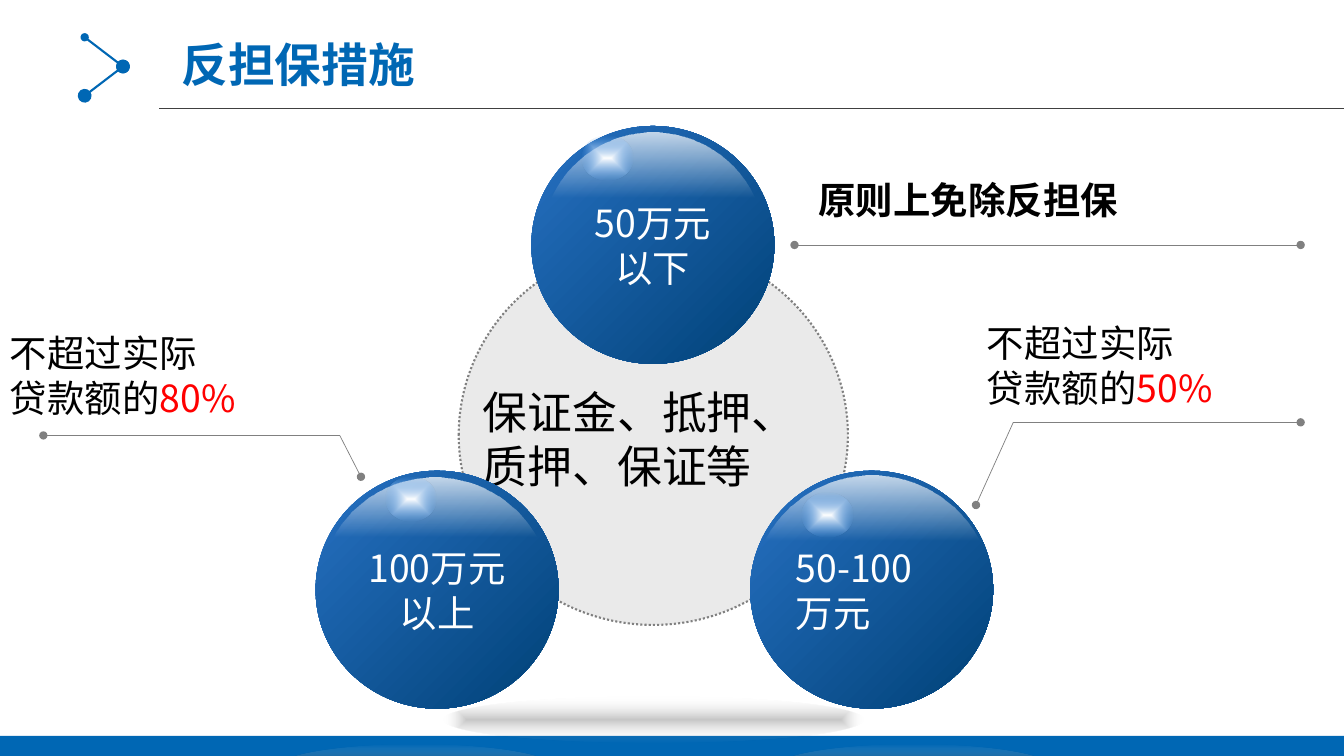
import math
from itertools import pairwise

from lxml import etree
from pptx import Presentation
from pptx import util as u
from pptx.dml.color import RGBColor
from pptx.enum import dml, shapes, text
from pptx.oxml import parse_xml
from pptx.oxml.ns import nsdecls, qn

FONT = "Noto Sans CJK SC"
BLUE, GREY, BLACK, WHITE, RED = "0067B4", "808080", "000000", "FFFFFF", "FF0000"
BODY = 26.7
BALL_W, BALL_H = 2.41, 2.36
GLINT_W, GLINT_H = 0.51, 0.44


def rgb(value):
    return RGBColor.from_string(value)


def box(*lengths):
    return [u.Inches(v) for v in lengths]


def gradient(sp, stops, angle=None):
    """Fill with (colour, opacity %) stops; without an angle, from the centre out."""
    gs = "".join(
        f'<a:gs pos="{i * 100000}"><a:srgbClr val="{c}">'
        f'<a:alpha val="{opacity * 1000}"/></a:srgbClr></a:gs>'
        for i, (c, opacity) in enumerate(stops))
    if angle is None:
        way = ('<a:path path="shape"><a:fillToRect l="50000" t="50000" '
               'r="50000" b="50000"/></a:path>')
    else:
        way = f'<a:lin ang="{angle * 60000}" scaled="0"/>'
    sp.fill.background()
    spPr = sp._element.spPr
    spPr.replace(spPr.find(qn("a:noFill")), parse_xml(
        f'<a:gradFill {nsdecls("a")} rotWithShape="1"><a:gsLst>{gs}</a:gsLst>{way}</a:gradFill>'))


def write(tf, lines, size=BODY, color=BLACK, bold=False, align=None, font=FONT):
    """Write lines; each is a list of strings or (string, colour) pairs."""
    for i, line in enumerate(lines):
        p = tf.paragraphs[0] if i == 0 else tf.add_paragraph()
        p.alignment = align
        for part in line:
            words, c = part if isinstance(part, tuple) else (part, color)
            r = p.add_run()
            r.text = words
            r.font.size, r.font.bold, r.font.name = u.Pt(size), bold, font
            r.font.color.rgb = rgb(c)
            etree.SubElement(r.font._element, qn("a:ea")).set("typeface", FONT)


def add_text(s, x, y, w, h, lines, **fmt):
    tf = s.shapes.add_textbox(*box(x, y, w, h)).text_frame
    tf.word_wrap = True
    write(tf, lines, **fmt)


def plain(s, kind, x, y, w, h):
    sp = s.shapes.add_shape(kind, *box(x, y, w, h))
    sp.shadow.inherit = False
    sp.line.fill.background()
    return sp


def ellipse(s, x, y, w, h):
    return plain(s, shapes.MSO_SHAPE.OVAL, x, y, w, h)


def line(s, start, end, color, width, head=None, tail=None):
    """Straight line; head and tail give the size of the round ends."""
    c = s.shapes.add_connector(shapes.MSO_CONNECTOR.STRAIGHT, *box(*start, *end))
    c.line.color.rgb = rgb(color)
    c.line.width = u.Pt(width)
    for tag, size in (("a:headEnd", head), ("a:tailEnd", tail)):
        if size:
            dot = etree.SubElement(c.line._ln, qn(tag))
            for key, value in (("type", "oval"), ("w", size), ("len", size)):
                dot.set(key, value)
    etree.SubElement(c._element.spPr, qn("a:effectLst"))


def callout(s, *points):
    """Thin bent line with a dot at each outer end."""
    pairs = list(pairwise(points))
    for i, (a, b) in enumerate(pairs):
        line(s, a, b, GREY, 0.5, head="med" if i == 0 else None,
             tail="med" if i == len(pairs) - 1 else None)


def cap(s, x, y, w, h):
    """Glossy highlight: the circle segment that fills the box."""
    radius = (w * w / 4 + h * h) / (2 * h)
    cx, cy = x + w / 2, y + radius
    half = math.asin(w / 2 / radius)
    arc = [(cx + radius * math.sin(t), cy - radius * math.cos(t))
           for t in (half * (i / 40 - 1) for i in range(81))]
    fb = s.shapes.build_freeform(*box(*arc[0]), scale=1.0)
    fb.add_line_segments([box(*pt) for pt in arc[1:]], close=True)
    sp = fb.convert_to_shape()
    sp.shadow.inherit = False
    sp.line.fill.background()
    gradient(sp, [(WHITE, 75), (WHITE, 0)], 90)


def ball(s, x, y, lines, shine, glint, align=text.PP_ALIGN.CENTER):
    """Ball with text; shine and glint are placed from its corner."""
    sp = ellipse(s, x, y, BALL_W, BALL_H)
    gradient(sp, [("2771C3", 100), ("004176", 100)], 45)
    tf = sp.text_frame
    tf.word_wrap = False
    tf.vertical_anchor = text.MSO_ANCHOR.MIDDLE
    write(tf, lines, color=WHITE, align=align)
    dx, dy, w, h = shine
    cap(s, x + dx, y + dy, w, h)
    dx, dy = glint
    gradient(ellipse(s, x + dx, y + dy, GLINT_W, GLINT_H), [(WHITE, 100), ("67ABF5", 0)])


def header(s, x, y):
    """Branch icon, title and rule."""
    tip = (x + 0.38, y + 0.29)
    line(s, (x, y), tip, BLUE, 1.5, head="med", tail="lg")
    line(s, tip, (x, y + 0.58), BLUE, 1.5, head="lg", tail="lg")
    line(s, (x + 0.74, y + 0.71), (13.33, y + 0.71), "404040", 0.75)
    title = s.shapes.title
    title.left, title.top, title.width, title.height = box(x + 0.83, y - 0.08, 2.6, 0.7)
    tf = title.text_frame
    tf.word_wrap = True
    tf.auto_size = text.MSO_AUTO_SIZE.NONE
    tf.vertical_anchor = text.MSO_ANCHOR.TOP
    tf.margin_left = tf.margin_right = u.Inches(0.13)
    tf.margin_top = tf.margin_bottom = u.Inches(0.07)
    write(tf, [["反担保措施"]], size=33.3, color=BLUE, bold=True,
          align=text.PP_ALIGN.LEFT, font="Arial")
    tf.paragraphs[0].line_spacing = 1.0
    tf.paragraphs[0].space_before = u.Pt(0)


def diagram(s, x, y):
    """Central disc with three balls; x, y is the corner of the disc."""
    disc = ellipse(s, x, y, 3.86, 3.77)
    disc.fill.solid()
    disc.fill.fore_color.rgb = rgb("EAEAEA")
    disc.line.color.rgb = rgb(GREY)
    disc.line.width = u.Pt(1.5)
    disc.line.dash_style = dml.MSO_LINE.ROUND_DOT

    ball(s, x + 0.72, y - 1.18, [["50万元"], ["以下"]], (0.2, 0.07, 2.01, 0.64), (0.5, 0.1))
    add_text(s, x + 0.14, y + 1.34, 3.81, 1.18,
             [["保证金、抵押、"], ["质押、保证等"]], size=32)

    # Floor shadows
    for dx, dy, w, opacity in ((-1.81, 4.96, 2.76, 45), (3.13, 4.96, 2.76, 45),
                               (-0.15, 4.48, 4.16, 22)):
        gradient(ellipse(s, x + dx, y + dy, w, 0.46), [(BLACK, opacity), (WHITE, 0)])

    ball(s, x - 1.42, y + 2.24, [["100万元"], ["以上"]], (0.18, 0.07, 2.01, 0.58), (0.69, 0.06))
    ball(s, x + 2.89, y + 2.24, [["50-100"], ["万元"]], (0.14, 0.05, 2.13, 0.64), (0.51, 0.22),
         align=text.PP_ALIGN.LEFT)


def notes_around(s):
    """Rules for each loan band, with their leader lines."""
    add_text(s, 8.02, 1.71, 4.69, 0.55, [["原则上免除反担保"]], bold=True)
    callout(s, (7.88, 2.43), (12.9, 2.43))
    callout(s, (9.68, 5.01), (10.05, 4.19), (12.9, 4.19))
    callout(s, (0.43, 4.32), (3.37, 4.32), (3.58, 4.73))
    for x, y, w, share in ((9.69, 3.13, 3.55, "50%"), (0, 3.23, 3.85, "80%")):
        add_text(s, x, y, w, 1, [["不超过实际"], ["贷款额的", (share, RED)]])


def main():
    prs = Presentation()
    prs.slide_width, prs.slide_height = box(13.33, 7.5)
    s = prs.slides.add_slide(prs.slide_layouts[5])
    # Footer band
    band = plain(s, shapes.MSO_SHAPE.RECTANGLE, 0, 7.3, 13.33, 0.2)
    band.fill.solid()
    band.fill.fore_color.rgb = rgb(BLUE)
    header(s, 0.84, 0.37)
    diagram(s, 4.55, 2.43)
    notes_around(s)
    prs.save("out.pptx")


if __name__ == "__main__":
    main()
